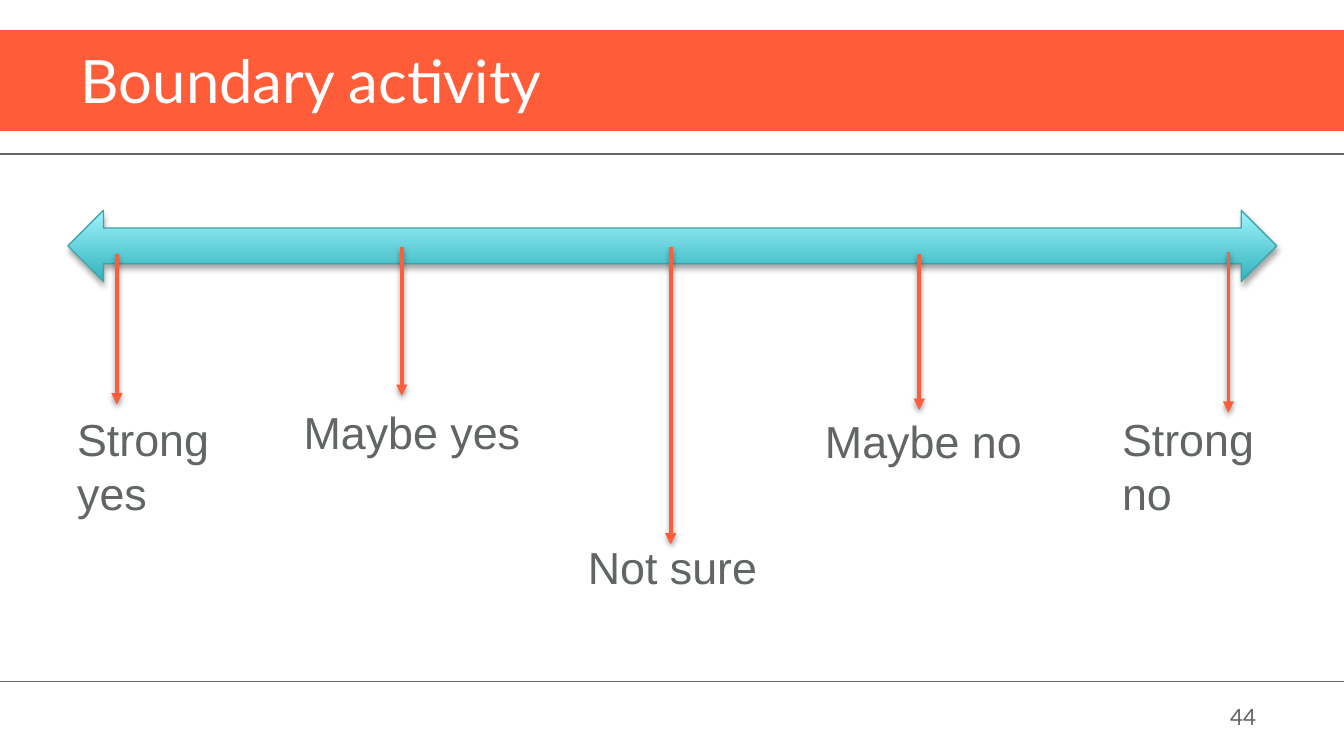
from dataclasses import dataclass

from lxml.etree import SubElement
from pptx import Presentation
from pptx.dml.color import RGBColor as Rgb
from pptx.enum.shapes import MSO_CONNECTOR as Connector, MSO_SHAPE as Shape
from pptx.enum.text import MSO_ANCHOR as Anchor, MSO_AUTO_SIZE as AutoSize, PP_ALIGN as Align
from pptx.oxml.ns import qn
from pptx.util import Emu, Pt

EMU_PER_PX = 4572
SLIDE_WIDTH, SLIDE_HEIGHT = 2000, 1125
TITLE_ONLY = 5


@dataclass(frozen=True)
class Theme:
    accent: Rgb = Rgb.from_string("FF5C39")
    ink: Rgb = Rgb.from_string("616662")
    paper: Rgb = Rgb.from_string("FFFFFF")
    scale_dark: Rgb = Rgb.from_string("32B3BC")
    scale_light: Rgb = Rgb.from_string("9FF3FC")
    scale_edge: Rgb = Rgb.from_string("3EA4AB")
    shadow: str = "000000"
    heading_font: str = "Lato"
    body_font: str = "Arial"
    title_size: int = 32
    label_size: int = 24
    number_size: int = 12
    thin: float = 0.75
    thick: float = 2


THEME = Theme()

ANSWERS = [
    ("Strong yes", (95, 603, 296, 182), (174, 378, 602)),
    ("Maybe yes", (432, 593, 378, 100), (598, 368, 589)),
    ("Maybe no", (1208, 606, 372, 100), (1368, 378, 610)),
    ("Strong no", (1650, 603, 316, 182), (1828, 375, 614)),
    ("Not sure", (855, 794, 332, 100), (998, 368, 810)),
]


def px(*lengths):
    return [Emu(length * EMU_PER_PX) for length in lengths]


def write_text(box, text, *, size, color, font=THEME.body_font,
               align=Align.LEFT, anchor=Anchor.TOP, fit=AutoSize.NONE):
    frame = box.text_frame
    frame.word_wrap = True
    frame.auto_size = fit
    frame.vertical_anchor = anchor
    para = frame.paragraphs[0]
    para.alignment = align
    span = para.add_run()
    span.text = text
    span.font.name = font
    span.font.size = Pt(size)
    span.font.color.rgb = color


def set_shadow(shape, *, distance=None, opacity=None):
    properties = shape._element.spPr
    effects = properties.find(qn("a:effectLst"))
    if effects is None:
        effects = SubElement(properties, qn("a:effectLst"))
    if distance is not None:
        shadow = SubElement(effects, qn("a:outerShdw"), blurRad=str(Pt(3.1)),
                            dist=str(Pt(distance)), dir="5400000", rotWithShape="0")
        color = SubElement(shadow, qn("a:srgbClr"), val=THEME.shadow)
        SubElement(color, qn("a:alpha"), val=str(opacity * 1000))


def add_line(page, start, end, color, width):
    line = page.shapes.add_connector(Connector.STRAIGHT, *px(*start, *end))
    line.line.color.rgb = color
    line.line.width = Pt(width)
    return line


def add_rule(page, y):
    set_shadow(add_line(page, (0, y), (SLIDE_WIDTH, y), THEME.ink, THEME.thin))


def add_pointer(page, x, top, bottom):
    pointer = add_line(page, (x, top), (x, bottom), THEME.accent, THEME.thick)
    SubElement(pointer.line._get_or_add_ln(), qn("a:tailEnd"), type="triangle")
    set_shadow(pointer, distance=1.6, opacity=38)


def add_shape(page, kind, area, edge):
    shape = page.shapes.add_shape(kind, *px(*area))
    shape.line.color.rgb = edge
    shape.line.width = Pt(THEME.thin)
    shape.shadow.inherit = False
    return shape


def add_banner(page):
    banner = add_shape(page, Shape.RECTANGLE, (0, 46, SLIDE_WIDTH, 148), THEME.accent)
    banner.fill.solid()
    banner.fill.fore_color.rgb = THEME.accent


def add_title(page, text):
    title = page.shapes.title
    title.element.getparent().append(title.element)
    title.left, title.top, title.width, title.height = px(100, 51, 1800, 136)
    write_text(title, text, size=THEME.title_size, color=THEME.paper,
               font=THEME.heading_font, anchor=Anchor.MIDDLE)


def add_scale(page):
    scale = add_shape(page, Shape.LEFT_RIGHT_ARROW, (101, 313, 1799, 106), THEME.scale_edge)
    scale.fill.gradient()
    scale.fill.gradient_angle = 90
    stops = scale.fill.gradient_stops
    for stop, position, color in zip(stops, (0, 1), (THEME.scale_dark, THEME.scale_light)):
        stop.position = position
        stop.color.rgb = color
    set_shadow(scale, distance=1.8, opacity=35)


def add_text(page, text, area, **style):
    box = page.shapes.add_textbox(*px(*area))
    write_text(box, text, color=THEME.ink, **style)


def main():
    deck = Presentation()
    deck.slide_width, deck.slide_height = px(SLIDE_WIDTH, SLIDE_HEIGHT)
    page = deck.slides.add_slide(deck.slide_layouts[TITLE_ONLY])
    add_banner(page)
    for y in (229, 1014):
        add_rule(page, y)
    add_text(page, "44", (1800, 1029, 100, 68), size=THEME.number_size,
             font=THEME.heading_font, align=Align.CENTER, anchor=Anchor.BOTTOM)
    add_title(page, "Boundary activity")
    add_scale(page)
    for label, area, pointer in ANSWERS:
        add_text(page, label, area, size=THEME.label_size, fit=AutoSize.SHAPE_TO_FIT_TEXT)
        add_pointer(page, *pointer)
    deck.save("out.pptx")


if __name__ == "__main__":
    main()
